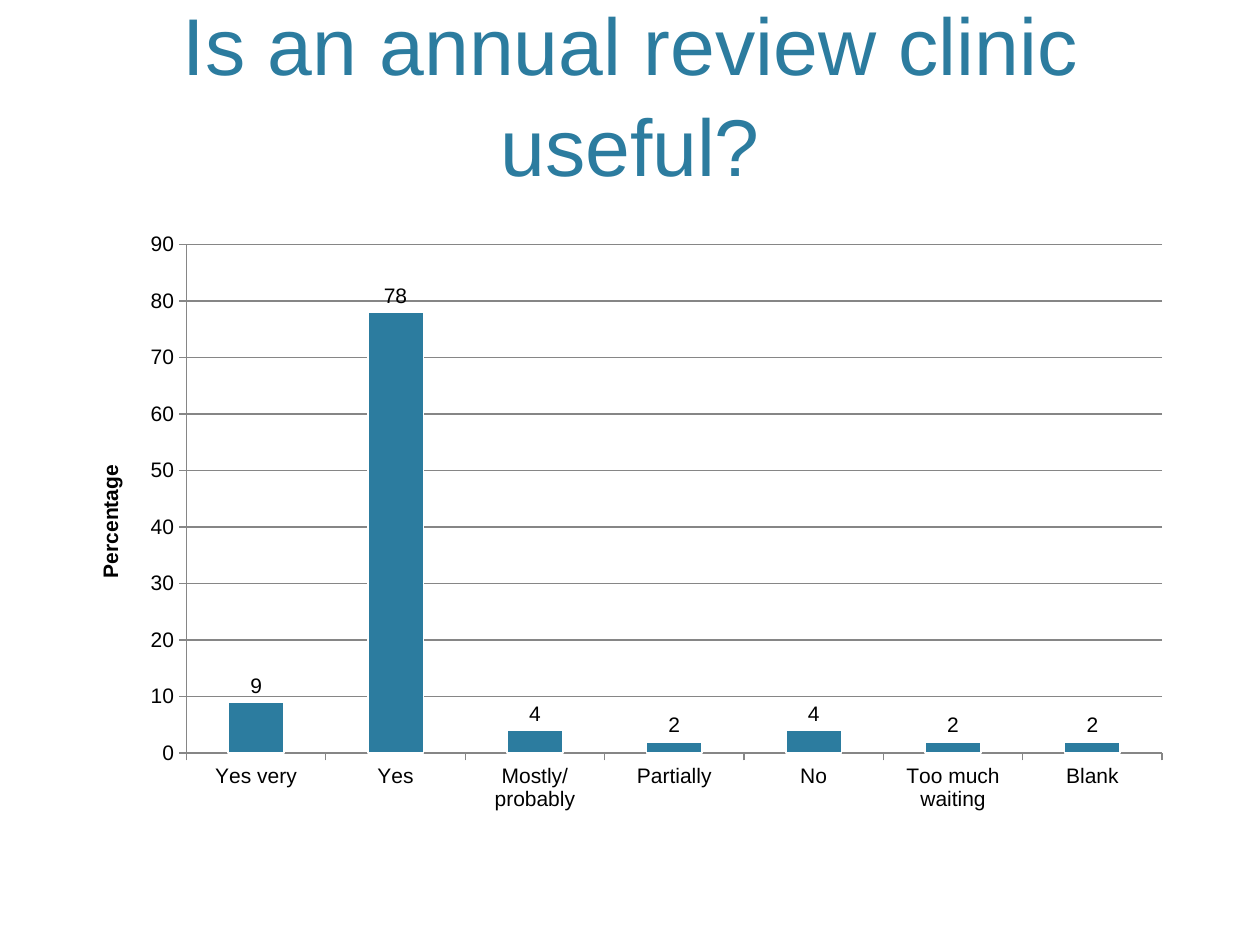
from lxml.etree import SubElement
from pptx import Presentation
from pptx.chart.data import CategoryChartData as Data
from pptx.dml.color import RGBColor
from pptx.enum.chart import XL_CHART_TYPE as Kind
from pptx.enum.chart import XL_LABEL_POSITION as Spot
from pptx.enum.chart import XL_TICK_MARK as Tick
from pptx.enum.text import MSO_ANCHOR as Anchor
from pptx.enum.text import MSO_AUTO_SIZE as Fit
from pptx.enum.text import PP_ALIGN as Align
from pptx.oxml.ns import qn
from pptx.util import Pt

SCALE = 9144  # EMU per px, 100 px to the inch
FACE = "Arial"
TEAL, GREY, BLACK, WHITE = "2C7C9F", "868686", "000000", "FFFFFF"
VOTES = {
    "Yes very": 9,
    "Yes": 78,
    "Mostly/probably": 4,
    "Partially": 2,
    "No": 4,
    "Too much waiting": 2,
    "Blank": 2,
}


def px(*nums):
    return [n * SCALE for n in nums]


def paint(color, tone):
    color.rgb = RGBColor.from_string(tone)


def set_font(font, size, tone, bold=False):
    font.name, font.size, font.bold = FACE, Pt(size), bold
    paint(font.color, tone)


def set_line(line, tone, width=0.75):
    paint(line.color, tone)
    line.width = Pt(width)


def add_title(slide, text, box):
    title = slide.shapes.title
    title.left, title.top, title.width, title.height = px(*box)
    frame = title.text_frame
    frame.word_wrap = True
    frame.auto_size = Fit.NONE
    frame.vertical_anchor = Anchor.BOTTOM
    para = frame.paragraphs[0]
    para.alignment = Align.CENTER
    para.line_spacing = 1.05
    run = para.add_run()
    run.text = text
    set_font(run.font, 46, TEAL)


def style_axis(axis):
    axis.major_tick_mark = Tick.OUTSIDE
    axis.minor_tick_mark = Tick.NONE
    set_line(axis.format.line, GREY)
    set_font(axis.tick_labels.font, 12, BLACK)


def place_plot(chart, **sides):
    area = chart.plots[0]._element.getparent()
    old = area.find(qn("c:layout"))
    if old is not None:
        area.remove(old)
    layout = SubElement(area, qn("c:layout"))
    area.insert(0, layout)
    manual = SubElement(layout, qn("c:manualLayout"))
    parts = {"layoutTarget": "inner", "xMode": "edge", "yMode": "edge", **sides}
    for name, val in parts.items():
        SubElement(manual, qn("c:" + name), val=str(val))


def add_bars(slide, votes, box):
    data = Data(number_format="0")
    data.categories = list(votes)
    data.add_series("Series 1", list(votes.values()))
    chart = slide.shapes.add_chart(Kind.COLUMN_CLUSTERED, *px(*box), data).chart
    chart.has_legend = chart.has_title = False
    set_font(chart.font, 12, BLACK)
    place_plot(chart, x=0.1, y=0.04, w=0.88, h=0.85)

    # Axes
    style_axis(chart.category_axis)
    scale = chart.value_axis
    style_axis(scale)
    scale.minimum_scale, scale.maximum_scale, scale.major_unit = 0, 90, 10
    scale.has_major_gridlines = True
    set_line(scale.major_gridlines.format.line, GREY)
    run = scale.axis_title.text_frame.paragraphs[0].add_run()
    run.text = "Percentage"
    set_font(run.font, 12, BLACK, bold=True)

    # Bars and labels
    plot = chart.plots[0]
    plot.gap_width = 150
    plot.vary_by_categories = False
    bars = plot.series[0].format
    bars.fill.solid()
    paint(bars.fill.fore_color, TEAL)
    set_line(bars.line, WHITE, 1)
    plot.has_data_labels = True
    labels = plot.data_labels
    labels.show_value = True
    labels.number_format, labels.number_format_is_linked = "0", False
    labels.position = Spot.OUTSIDE_END
    set_font(labels.font, 12, BLACK)


def main():
    deck = Presentation()
    deck.slide_width, deck.slide_height = px(1000, 750)
    slide = deck.slides.add_slide(deck.slide_layouts[5])
    add_title(slide, "Is an annual review clinic useful?", (60, 12, 880, 146))
    add_bars(slide, VOTES, (60, 175, 880, 475))
    deck.save("out.pptx")


if __name__ == "__main__":
    main()
